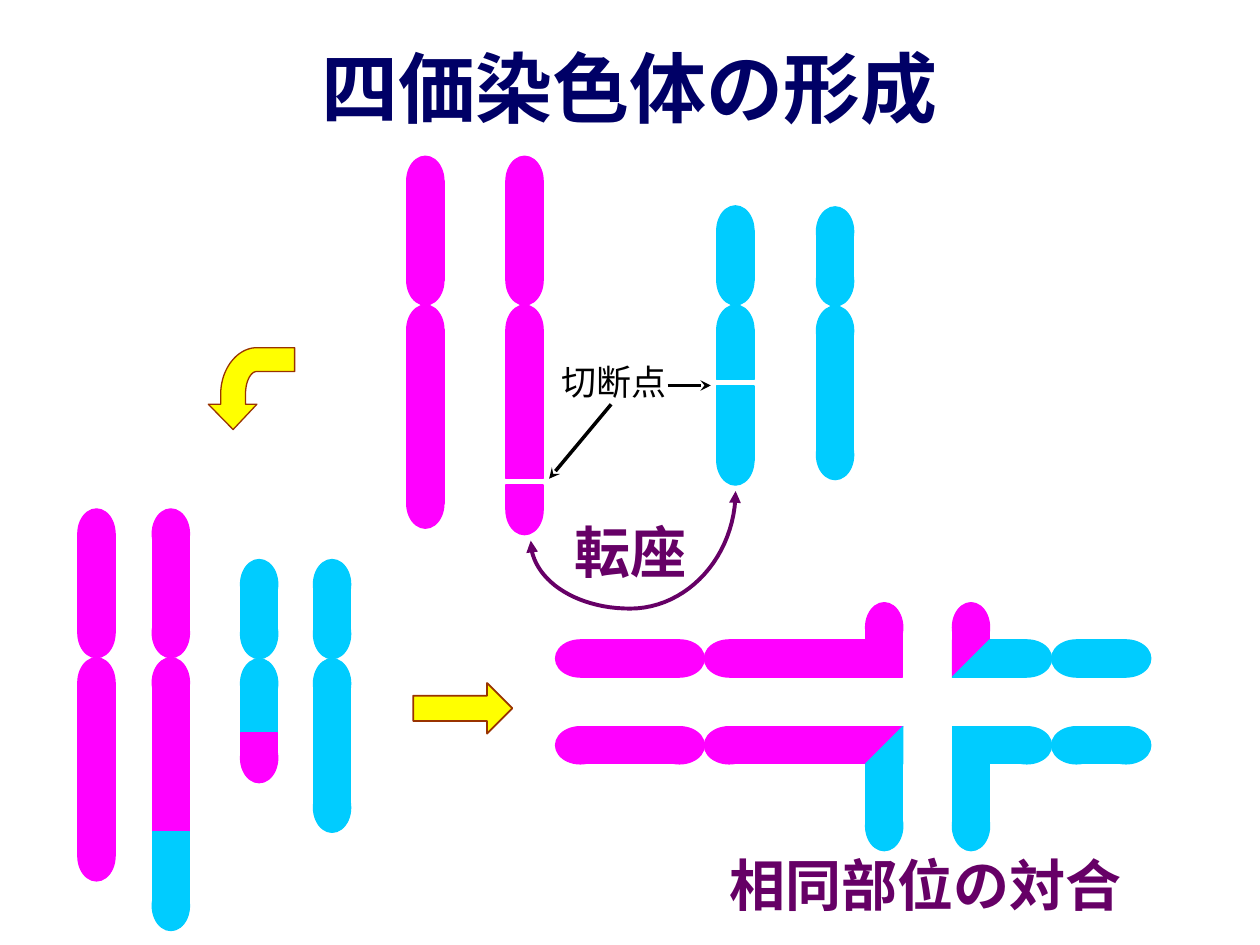
from lxml import etree
from pptx import Presentation, util as u
from pptx.dml.color import RGBColor
from pptx.enum import shapes, text
from pptx.oxml.ns import qn

PINK, CYAN, YELLOW = "FF00FF", "00CCFF", "FFFF00"
BROWN, PURPLE, NAVY, BLACK = "993300", "660066", "000066", "000000"
WIDTH = 0.75  # chromosome thickness
CAP = 1       # length of a rounded end
BOTH, FIRST, LAST = (True, True), (True, False), (False, True)  # rounded ends


def rgb(value):
    return RGBColor.from_string(value)


def bezier(p0, p1, p2, p3, steps=24):
    """Points of a cubic curve, both ends included."""
    points = []
    for i in range(steps + 1):
        t = i / steps
        weights = ((1 - t) ** 3, 3 * t * (1 - t) ** 2, 3 * t ** 2 * (1 - t), t ** 3)
        points.append(tuple(sum(w * p[axis] for w, p in zip(weights, (p0, p1, p2, p3)))
                            for axis in (0, 1)))
    return points


class Slide:
    """Current slide and its style; all lengths are in centimetres."""
    font = "Noto Sans CJK JP"

    def __init__(self, s):
        self.s = s

    def box(self, x, y, w, h):
        return [u.Cm(v) for v in (x, y, w, h)]

    def paint(self, sp, fill, line, width):
        sp.shadow.inherit = False
        if fill:
            sp.fill.solid()
            sp.fill.fore_color.rgb = rgb(fill)
        else:
            sp.fill.background()
        sp.line.color.rgb = rgb(line)
        sp.line.width = u.Pt(width)

    def arrowhead(self, sp, kind):
        ln = sp.line._get_or_add_ln()
        etree.SubElement(ln, qn("a:tailEnd"), type=kind)

    def shape(self, kind, x, y, w, h, fill, line=None, width=0, parent=None):
        sp = (parent or self.s).shapes.add_shape(kind, *self.box(x, y, w, h))
        self.paint(sp, fill, line or fill, width)
        return sp

    def fill_text(self, sp, content, size, color, bold):
        p = sp.text_frame.paragraphs[0]
        p.text = content
        for r in p.runs:
            r.font.name = self.font
            r.font.size = u.Pt(size)
            r.font.bold = bold
            r.font.color.rgb = rgb(color)
            r.font._element.find(qn("a:latin")).addnext(
                etree.Element(qn("a:ea"), typeface=self.font))
        return p

    def title(self, content):
        sp = self.s.shapes.title
        sp.left, sp.top, sp.width, sp.height = self.box(1.27, 0.15, 22.86, 3.18)
        sp.text_frame.vertical_anchor = text.MSO_ANCHOR.MIDDLE
        self.fill_text(sp, content, 44, NAVY, True).alignment = text.PP_ALIGN.CENTER

    def label(self, content, x, y, w, h, size, color, bold=False, wrap=True):
        sp = self.s.shapes.add_textbox(*self.box(x, y, w, h))
        sp.text_frame.word_wrap = wrap
        sp.text_frame.auto_size = text.MSO_AUTO_SIZE.SHAPE_TO_FIT_TEXT
        self.fill_text(sp, content, size, color, bold)

    def arm(self, x, y, length, color, ends=BOTH, across=False, parent=None):
        """Bar with rounded ends, running down or, if across, to the right."""
        def piece(kind, start, size):
            place = (x + start, y, size, WIDTH) if across else (x, y + start, WIDTH, size)
            self.shape(kind, *place, color, parent=parent)

        first, last = ends
        start = CAP / 2 if first else 0
        stop = length - (CAP / 2 if last else 0)
        if first:
            piece(shapes.MSO_SHAPE.OVAL, 0, CAP)
        piece(shapes.MSO_SHAPE.RECTANGLE, start, stop - start)
        if last:
            piece(shapes.MSO_SHAPE.OVAL, length - CAP, CAP)

    def chromosome(self, x, y, *arms):
        """Group of arms, each (start, length, colour, ends)."""
        group = self.s.shapes.add_group_shape()
        for start, length, color, ends in arms:
            self.arm(x, y + start, length, color, ends, parent=group)

    def split_square(self, x, y):
        """Square cut along its diagonal: pink upper left, cyan lower right."""
        for color, turn in ((PINK, 90), (CYAN, 270)):
            sp = self.shape(shapes.MSO_SHAPE.RIGHT_TRIANGLE, x, y, WIDTH, WIDTH, color)
            sp.rotation = turn

    def outline(self, points, line, width, fill=None, head=None):
        points = [(u.Cm(x), u.Cm(y)) for x, y in points]
        builder = self.s.shapes.build_freeform(*points[0])
        builder.add_line_segments(points[1:], close=bool(fill))
        sp = builder.convert_to_shape()
        self.paint(sp, fill, line, width)
        if head:
            self.arrowhead(sp, head)

    def pointer(self, x1, y1, x2, y2):
        c = self.s.shapes.add_connector(shapes.MSO_CONNECTOR.STRAIGHT,
                                        *self.box(x1, y1, x2, y2))
        c.line.color.rgb = rgb(BLACK)
        c.line.width = u.Pt(2)
        self.arrowhead(c, "stealth")
        etree.SubElement(c._element.spPr, qn("a:effectLst"))


def main():
    prs = Presentation()
    prs.slide_width, prs.slide_height = u.Cm(25.4), u.Cm(19.05)
    s = Slide(prs.slides.add_slide(prs.slide_layouts[5]))
    s.title("四価染色体の形成")

    # Normal chromosomes, before and after the translocation
    long_arms = (0, 3, PINK, BOTH), (3, 4.5, PINK, BOTH)
    short_arms = (0, 2, CYAN, BOTH), (2, 3.5, CYAN, BOTH)
    for x, y in ((8.2, 3.15), (1.57, 10.26)):
        s.chromosome(x, y, *long_arms)
    for x, y in ((16.46, 4.17), (6.32, 11.28)):
        s.chromosome(x, y, *short_arms)

    # Broken chromosomes, then the same ones with their ends exchanged
    long_stump = long_arms[0], (3, 3.5, PINK, FIRST)
    short_stump = short_arms[0], (2, 1.5, CYAN, FIRST)
    s.chromosome(10.2, 3.15, *long_stump, (6.63, 1, PINK, LAST))
    s.chromosome(14.45, 4.15, *short_stump, (3.63, 2, CYAN, LAST))
    s.chromosome(3.07, 10.26, *long_stump, (6.5, 2, CYAN, LAST))
    s.chromosome(4.85, 11.28, *short_stump, (3.5, 1, PINK, LAST))

    # Pairing cross
    left, right, upper, lower = 17.45, 19.2, 12.9, 14.65
    for y, pink_inner, cyan_start in ((upper, 4, right + WIDTH), (lower, 3.25, right)):
        s.arm(11.2, y, 3, PINK, across=True)
        s.arm(14.2, y, pink_inner, PINK, FIRST, across=True)
        s.arm(cyan_start, y, 21.2 - cyan_start, CYAN, LAST, across=True)
        s.arm(21.2, y, 2, CYAN, across=True)
    s.arm(left, 12.15, 1.25, PINK, FIRST)
    s.arm(right, 12.15, 0.75, PINK, FIRST)
    s.arm(left, lower + WIDTH, 1.75, CYAN, LAST)
    s.arm(right, lower + 0.5, 2, CYAN, LAST)
    s.split_square(left, lower)
    s.split_square(right, upper)

    # Step arrows
    s.shape(shapes.MSO_SHAPE.RIGHT_ARROW, 8.33, 13.77, 2, 1.02, YELLOW, BROWN, 1)
    outer = bezier((4.45, 7.95), (4.45, 7.44), (4.78, 7.01), (5.18, 7.01))
    inner = bezier((5.18, 7.49), (5.05, 7.49), (4.95, 7.7), (4.95, 7.95))
    s.outline([(4.7, 8.66), (4.2, 8.15), (4.45, 8.15), *outer, (5.94, 7.01),
               (5.94, 7.49), *inner, (4.95, 8.15), (5.18, 8.15)], BROWN, 0.75, YELLOW)

    # Break points and exchange
    s.pointer(12.32, 8.15, 11.07, 9.65)
    s.pointer(13.46, 7.77, 14.33, 7.77)
    s.label("切断点", 11.07, 7.14, 2.62, 1.09, 20, BLACK, wrap=False)
    bottom = (12.7, 12.27)
    for curve in (((13.87, 12.27), (14.83, 11.2), (14.83, 9.9)),
                  ((11.58, 12.27), (10.7, 11.66), (10.7, 10.9))):
        s.outline(bezier(bottom, *curve), PURPLE, 2.25, head="triangle")
    s.label("転座", 11.33, 10.31, 3.12, 1.6, 32, PURPLE, True)
    s.label("相同部位の対合", 14.45, 17.02, 8.99, 1.6, 32, PURPLE, True)

    prs.save("out.pptx")


if __name__ == "__main__":
    main()
